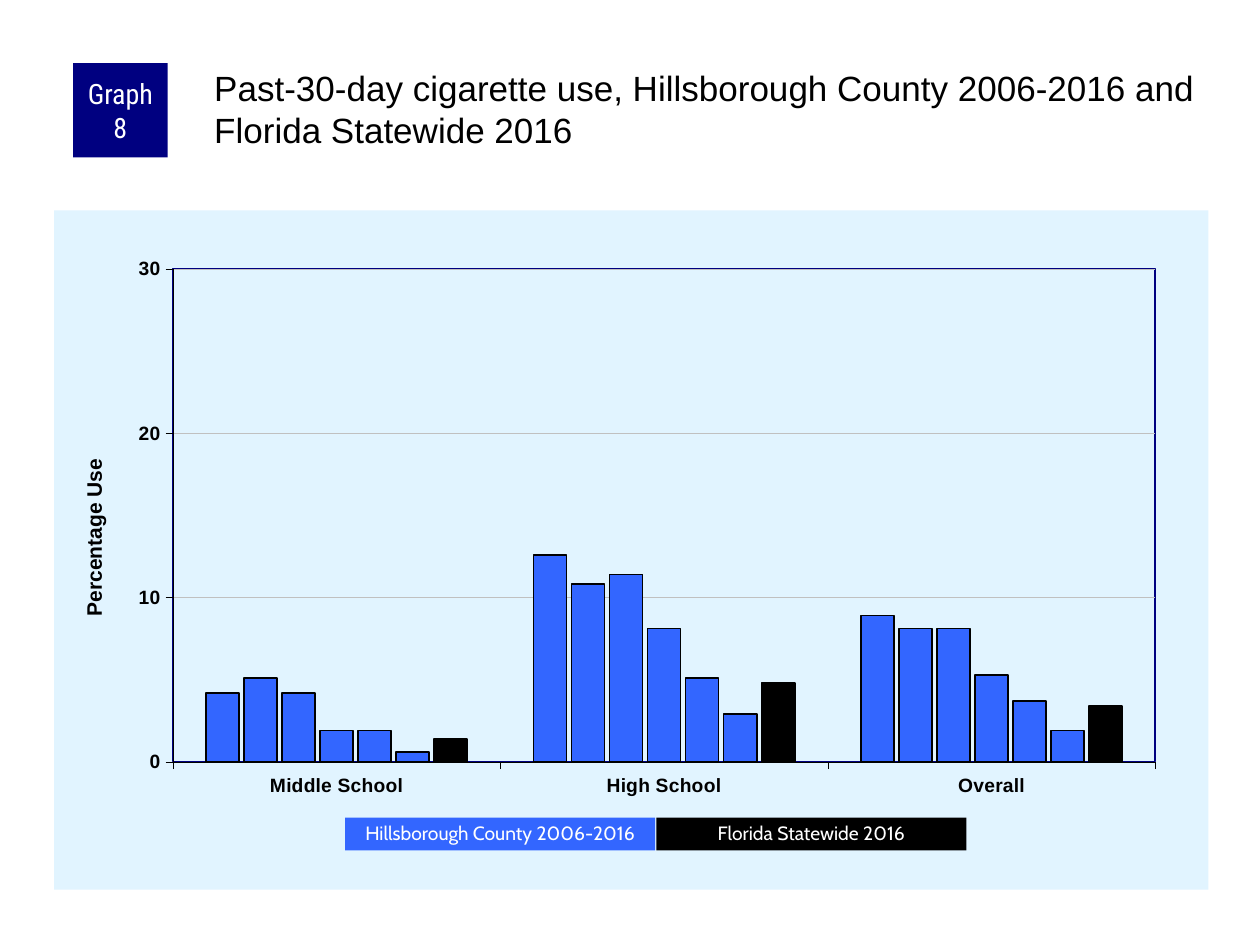
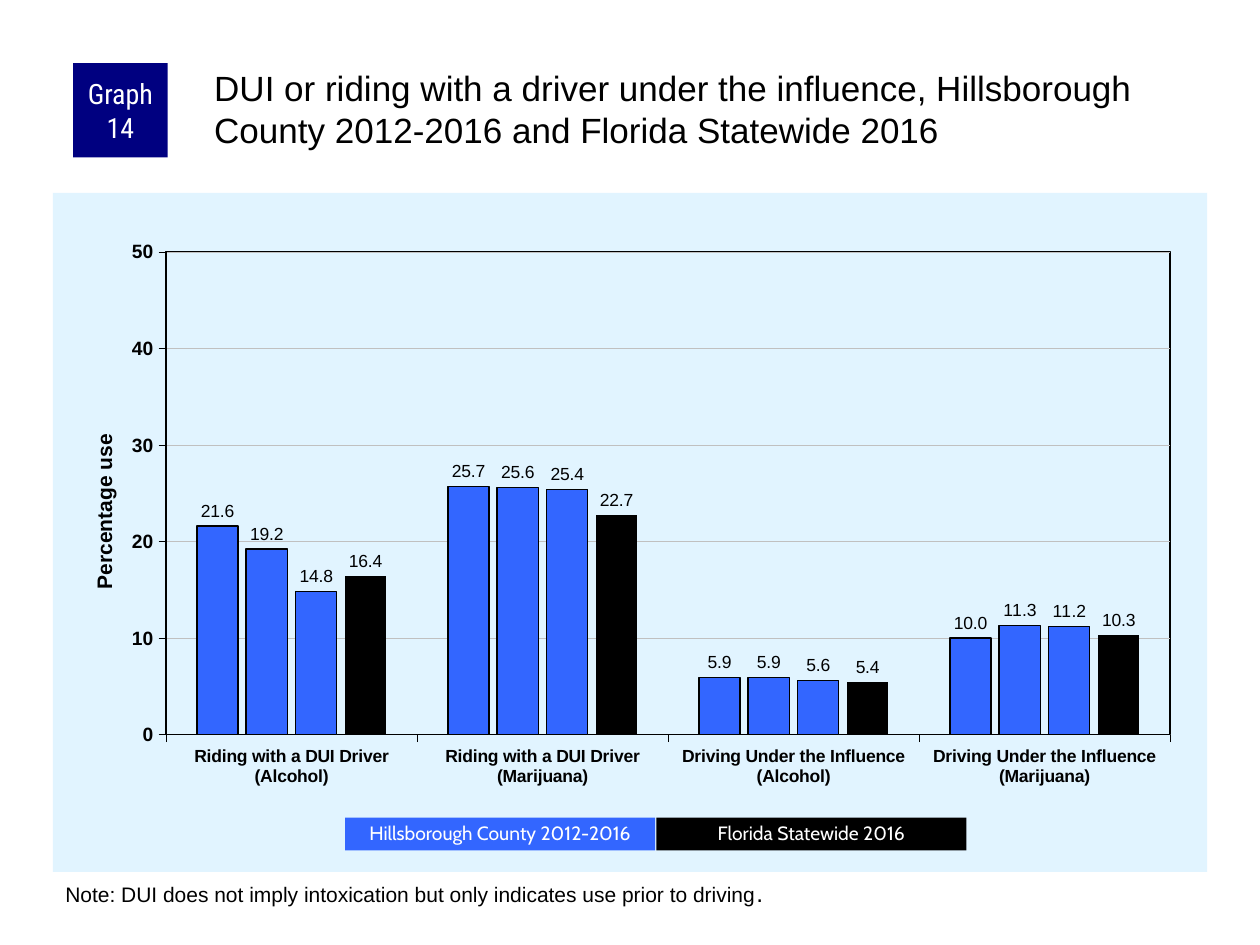
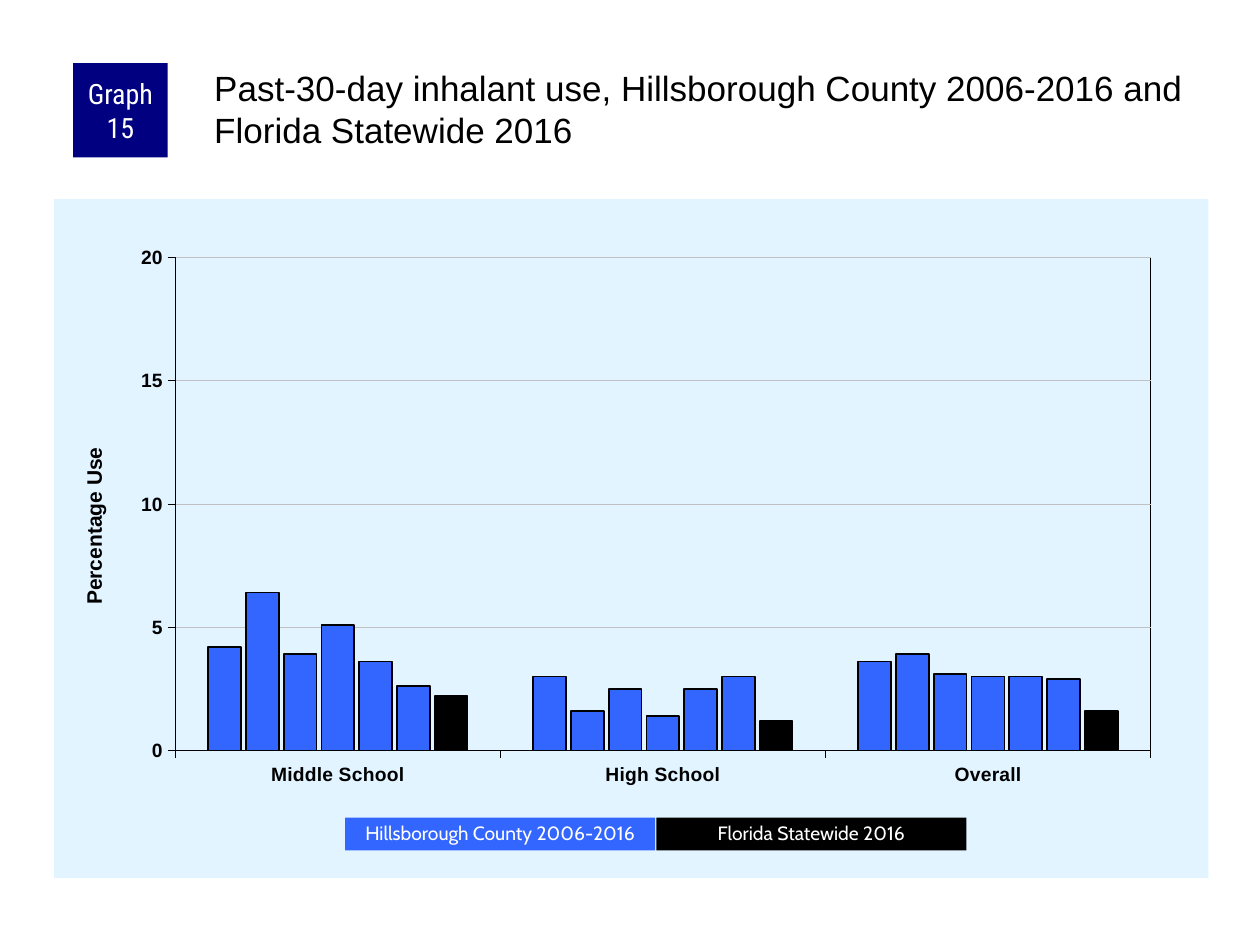
from pptx import Presentation
from pptx.chart.data import CategoryChartData
from pptx.dml.color import RGBColor
from pptx.enum.chart import XL_CHART_TYPE, XL_LABEL_POSITION, XL_TICK_MARK
from pptx.enum.shapes import MSO_SHAPE
from pptx.enum.text import MSO_ANCHOR, MSO_AUTO_SIZE, PP_ALIGN
from pptx.oxml import parse_xml
from pptx.oxml.ns import nsdecls, qn
from pptx.util import Inches, Pt

BLACK, WHITE, NAVY = "000000", "FFFFFF", "000080"
COUNTY_BLUE, PANEL_BLUE, GRID_GRAY = "3366FF", "E1F4FF", "C0C0C0"
STATEWIDE = "Florida Statewide 2016"


def rgb(value):
    return RGBColor.from_string(value)


def set_font(font, size, color=BLACK, name="Arial", bold=False):
    font.size, font.name, font.bold = Pt(size), name, bold
    font.color.rgb = rgb(color)


def set_line(line, color, width):
    line.color.rgb = rgb(color)
    line.width = Pt(width)


def set_layout(parent, index, x, y, size=None, target=""):
    for previous in parent.findall(qn("c:layout")):
        parent.remove(previous)
    fields = [("xMode", "edge"), ("yMode", "edge"), ("x", x), ("y", y)]
    if target:
        fields.insert(0, ("layoutTarget", target))
    if size:
        fields += [("w", size[0]), ("h", size[1])]
    body = "".join(f'<c:{tag} val="{value}"/>' for tag, value in fields)
    parent.insert(index, parse_xml(
        f'<c:layout {nsdecls("c")}><c:manualLayout>{body}</c:manualLayout></c:layout>'))


def area_format(fill, line):
    return parse_xml(f'<c:spPr {nsdecls("c", "a")}>{fill}<a:ln w="9525">{line}</a:ln></c:spPr>')


def solid(color):
    return f'<a:solidFill><a:srgbClr val="{color}"/></a:solidFill>'


class GraphDeck:
    def __init__(self):
        self.prs = Presentation()
        self.prs.slide_width, self.prs.slide_height = Inches(10), Inches(7.5)
        self.slide = None

    def new_slide(self):
        self.slide = self.prs.slides.add_slide(self.prs.slide_layouts[5])

    def title(self, text):
        title = self.slide.shapes.title
        title.left, title.top = Inches(1.67), Inches(0.5)
        title.width, title.height = Inches(7.92), Inches(0.83)
        frame = title.text_frame
        frame.text = text
        frame.word_wrap, frame.auto_size = True, MSO_AUTO_SIZE.NONE
        frame.vertical_anchor = MSO_ANCHOR.TOP
        frame.margin_left = frame.margin_top = Inches(0.03)
        frame.margin_right = frame.margin_bottom = 0
        frame.paragraphs[0].alignment = PP_ALIGN.LEFT
        set_font(frame.paragraphs[0].runs[0].font, 20)

    def block(self, text, left, top, width, height, fill, size, font):
        block = self.slide.shapes.add_shape(
            MSO_SHAPE.RECTANGLE, Inches(left), Inches(top), Inches(width), Inches(height))
        block.shadow.inherit = False
        block.fill.solid()
        block.fill.fore_color.rgb = rgb(fill)
        block.line.fill.background()
        frame = block.text_frame
        frame.text = text
        frame.word_wrap, frame.vertical_anchor = True, MSO_ANCHOR.MIDDLE
        frame.paragraphs[0].alignment = PP_ALIGN.CENTER
        set_font(frame.paragraphs[0].runs[0].font, size, WHITE, font)
        return frame

    def badge(self, number):
        frame = self.block(f"Graph {number}", 0.58, 0.5, 0.75, 0.75, NAVY, 16, "Roboto Condensed")
        frame.margin_left = frame.margin_right = Inches(0.05)
        frame.margin_top = frame.margin_bottom = 0

    def legend(self, county):
        for index, (label, fill) in enumerate([(county, COUNTY_BLUE), (STATEWIDE, BLACK)]):
            frame = self.block(label, 2.74 + 2.47 * index, 6.49, 2.46, 0.26, fill, 11, "Cabin")
            frame.paragraphs[0].line_spacing = 0.9

    def note(self, text, stop):
        note = self.slide.shapes.add_textbox(Inches(0.42), Inches(6.92), Inches(9.17), Inches(0.34))
        frame = note.text_frame
        frame.word_wrap, frame.auto_size = True, MSO_AUTO_SIZE.SHAPE_TO_FIT_TEXT
        for part, size in [(text, 12), (stop, 14)]:
            run = frame.paragraphs[0].add_run()
            run.text = part
            set_font(run.font, size)

    def axis(self, axis, size):
        axis.major_tick_mark, axis.minor_tick_mark = XL_TICK_MARK.OUTSIDE, XL_TICK_MARK.NONE
        set_font(axis.tick_labels.font, size, bold=True)
        set_line(axis.format.line, BLACK, 0.25)

    def axis_title(self, axis, text, position):
        title = axis.axis_title
        title.text_frame.text = text
        set_font(title.text_frame.paragraphs[0].runs[0].font, 12, bold=True)
        turned = title.element.find(".//" + qn("a:bodyPr"))
        turned.set("rot", "-5400000")
        turned.set("vert", "horz")
        set_layout(title.element, 1, *position)

    def chart(self, left, top, categories, years, maximum, step, plot, axis_text, axis_at,
              frame_color=BLACK, gap=200, overlap=-15, category_size=11, borders=None,
              font_size=8, labels=False):
        data = CategoryChartData()
        data.categories = categories
        for number, values in enumerate(years, 1):
            data.add_series(f"Series {number}", values)
        chart = self.slide.shapes.add_chart(
            XL_CHART_TYPE.COLUMN_CLUSTERED, Inches(left), Inches(top),
            Inches(9.16), Inches(5.39), data).chart
        chart.has_legend = chart.has_title = False
        set_font(chart.font, font_size)

        percent = chart.value_axis
        percent.minimum_scale, percent.maximum_scale, percent.major_unit = 0, maximum, step
        set_line(percent.major_gridlines.format.line, GRID_GRAY, 0.25)
        self.axis(percent, 11)
        self.axis(chart.category_axis, category_size)
        self.axis_title(percent, axis_text, axis_at)

        bars = chart.plots[0]
        bars.gap_width, bars.overlap, bars.vary_by_categories = gap, overlap, False
        colors = [COUNTY_BLUE] * (len(years) - 1) + [BLACK]
        for series, color, border in zip(bars.series, colors, borders or [1] * len(years)):
            series.format.fill.solid()
            series.format.fill.fore_color.rgb = rgb(color)
            series.invert_if_negative = False
            if border:
                set_line(series.format.line, BLACK, border)
            else:
                series.format.line.fill.background()
            if labels:
                self.value_labels(series.data_labels)

        space = chart.element
        space.find(qn("c:chart")).addnext(area_format(solid(PANEL_BLUE), "<a:noFill/>"))
        plot_area = space.find(".//" + qn("c:plotArea"))
        set_layout(plot_area, 0, *plot[:2], size=plot[2:], target="inner")
        plot_area.append(area_format("<a:noFill/>", solid(frame_color)))

    def value_labels(self, labels):
        labels.show_value = True
        labels.number_format, labels.number_format_is_linked = "0.0", False
        labels.position = XL_LABEL_POSITION.OUTSIDE_END
        set_font(labels.font, 10)


SCHOOLS = ["Middle School", "High School", "Overall"]
DUI_GROUPS = [f"{behavior} ({substance})"
              for behavior in ("Riding with a DUI Driver", "Driving Under the Influence")
              for substance in ("Alcohol", "Marijuana")]

CIGARETTES = [(4.2, 12.6, 8.9), (5.1, 10.8, 8.1), (4.2, 11.4, 8.1), (1.9, 8.1, 5.3),
              (1.9, 5.1, 3.7), (0.6, 2.9, 1.9), (1.4, 4.8, 3.4)]
DUI = [(21.6, 25.7, 5.9, 10), (19.2, 25.6, 5.9, 11.3),
       (14.8, 25.4, 5.6, 11.2), (16.4, 22.7, 5.4, 10.3)]
INHALANTS = [(4.2, 3, 3.6), (6.4, 1.6, 3.9), (3.9, 2.5, 3.1), (5.1, 1.4, 3),
             (3.6, 2.5, 3), (2.6, 3, 2.9), (2.2, 1.2, 1.6)]

GRAPHS = [
    (8, "Past-30-day cigarette use", "2006-2016", "",
     dict(left=0.43, top=1.67, categories=SCHOOLS, years=CIGARETTES, maximum=30, step=10,
          plot=(0.103, 0.086, 0.851, 0.726), axis_text="Percentage Use", axis_at=(0.02, 0.36),
          frame_color=NAVY)),
    (14, "DUI or riding with a driver under the influence", "2012-2016",
     "Note: DUI does not imply intoxication but only indicates use prior to driving",
     dict(left=0.42, top=1.53, categories=DUI_GROUPS, years=DUI, maximum=50, step=10,
          plot=(0.098, 0.087, 0.87, 0.711), axis_text="Percentage use", axis_at=(0.03, 0.35),
          gap=150, overlap=-20, category_size=10, borders=[1, 1, 0.75, 0],
          font_size=11.5, labels=True)),
    (15, "Past-30-day inhalant use", "2006-2016", "",
     dict(left=0.43, top=1.58, categories=SCHOOLS, years=INHALANTS, maximum=20, step=5,
          plot=(0.105, 0.086, 0.845, 0.726), axis_text="Percentage Use", axis_at=(0.02, 0.36))),
]


def main():
    deck = GraphDeck()
    for number, topic, period, note, chart in GRAPHS:
        county = f"Hillsborough County {period}"
        deck.new_slide()
        deck.chart(**chart)
        deck.badge(number)
        deck.title(f"{topic}, {county} and {STATEWIDE}")
        if note:
            deck.note(note, ".")
        deck.legend(county)
    deck.prs.save("out.pptx")


if __name__ == "__main__":
    main()
